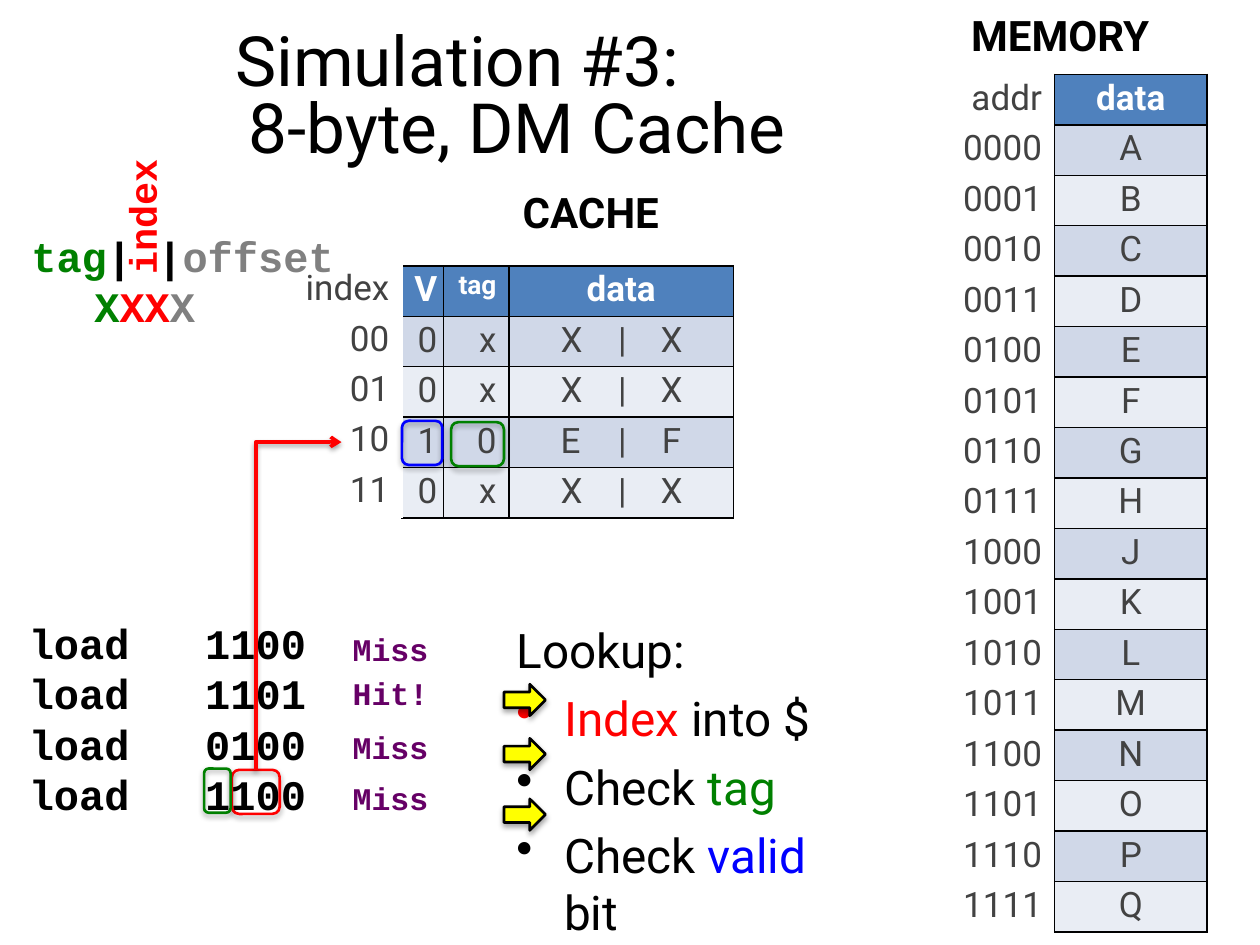
import dataclasses
import pptx
import pptx.chart.data
import pptx.dml.color
import pptx.enum.shapes
import pptx.enum.text
import pptx.oxml
import pptx.oxml.ns
import pptx.util
from lxml import etree

Inches, Pt = pptx.util.Inches, pptx.util.Pt
qn = pptx.oxml.ns.qn
Align = pptx.enum.text.PP_ALIGN
Shape = pptx.enum.shapes.MSO_SHAPE


@dataclasses.dataclass(frozen=True)
class Theme:
    sans: str = "Roboto"
    mono: str = "Courier New"
    black: str = "000000"
    white: str = "FFFFFF"
    grey: str = "808080"
    label: str = "424242"
    red: str = "FF0000"
    green: str = "008000"
    blue: str = "0000FF"
    purple: str = "660066"
    yellow: str = "FFFF00"
    header: str = "4F81BD"
    bands: tuple = ("D0D8E8", "E9EDF4")
    title: float = 39.6
    lookup: float = 27.2
    heading: float = 24
    index: float = 22
    cell: float = 20
    result: float = 18
    small: float = 15


THEME = Theme()
ROW = 0.4


def rgb(value):
    return pptx.dml.color.RGBColor.from_string(value)


def apply(target, values):
    for name, value in values.items():
        setattr(target, name, value)


def child(parent, tag, **attributes):
    return etree.SubElement(parent, qn(tag), {key: str(value) for key, value in attributes.items()})


def write(para, spans, size, font=THEME.sans, bold=False, **layout):
    apply(para, layout)
    for text, color in spans:
        span = para.add_run()
        span.text = text
        apply(span.font, {"name": font, "size": Pt(size), "bold": bold})
        span.font.color.rgb = rgb(color)


def set_tabs(para, stops, align):
    tabs = child(para._p.get_or_add_pPr(), "a:tabLst")
    for stop in stops:
        child(tabs, "a:tab", pos=Inches(stop), algn=align)


def add_text(page, box, lines, size, **style):
    frame = page.shapes.add_textbox(*map(Inches, box)).text_frame
    frame.word_wrap = True
    for number, spans in enumerate(lines):
        para = frame.add_paragraph() if number else frame.paragraphs[0]
        write(para, spans, size, **style)
    return frame


def add_shadow(shape, alpha=35, distance=1.8):
    effects = child(shape._element.spPr, "a:effectLst")
    shadow = child(effects, "a:outerShdw", blurRad=Pt(3.1), dist=Pt(distance), dir=5400000, rotWithShape=0)
    color = child(shadow, "a:srgbClr", val=THEME.black)
    child(color, "a:alpha", val=alpha * 1000)


def add_mark(page, kind, box, line, fill=None):
    mark = page.shapes.add_shape(kind, *map(Inches, box))
    if fill:
        mark.fill.solid()
        mark.fill.fore_color.rgb = rgb(fill)
    else:
        mark.fill.background()
    mark.line.color.rgb = rgb(line)
    mark.line.width = Pt(1.5)
    add_shadow(mark)


def add_grid(page, left, top, widths, rows):
    frame = page.shapes.add_table(rows, len(widths), Inches(left), Inches(top),
                                  Inches(sum(widths)), Inches(ROW * rows))
    table = frame.table
    apply(table, {"first_row": False, "horz_banding": False})
    for column, width in zip(table.columns, widths):
        column.width = Inches(width)
    for row in table.rows:
        row.height = Inches(ROW)
    return table


def border(cell, sides):
    properties = cell._tc.get_or_add_tcPr()
    for number, side in enumerate(sides):
        line = etree.Element(qn(f"a:ln{side}"), {"w": str(Pt(1))})
        child(child(line, "a:solidFill"), "a:srgbClr", val=THEME.black)
        properties.insert(number, line)


def fill_label(cell, text):
    cell.fill.background()
    write(cell.text_frame.paragraphs[0], [(text, THEME.label)], THEME.cell,
          alignment=Align.RIGHT, line_spacing=0.9)


def fill_data(cell, text, row, align, size=THEME.cell):
    header = row == 0
    cell.fill.solid()
    cell.fill.fore_color.rgb = rgb(THEME.header if header else THEME.bands[(row - 1) % 2])
    color = THEME.white if header else THEME.label
    write(cell.text_frame.paragraphs[0], [(text, color)], size, bold=header,
          alignment=align, line_spacing=0.9)
    border(cell, "LRTB")


def add_title(page, box):
    title = page.shapes.title
    apply(title, dict(zip(("left", "top", "width", "height"), map(Inches, box))))
    frame = title.text_frame
    apply(frame, {"word_wrap": True, "auto_size": pptx.enum.text.MSO_AUTO_SIZE.NONE,
                  "vertical_anchor": pptx.enum.text.MSO_ANCHOR.MIDDLE})
    second = frame.add_paragraph()
    for para, text in zip(frame.paragraphs, ("Simulation #3:", "8-byte, DM Cache")):
        write(para, [(text, THEME.black)], THEME.title, alignment=Align.CENTER,
              line_spacing=0.8, space_before=Pt(0))
    second._p.get_or_add_pPr().set("marL", str(Inches(0.95)))


def add_memory(page, left, top):
    add_text(page, (left + 0.1, top - 0.56, 1.7, 0.5), [[("MEMORY", THEME.black)]], THEME.heading, bold=True)
    rows = [("addr", "data")] + [(f"{number:04b}", letter) for number, letter in enumerate("ABCDEFGHJKLMNOPQ")]
    table = add_grid(page, left, top, (0.86, 1.21), len(rows))
    for row, (address, data) in enumerate(rows):
        fill_label(table.cell(row, 0), address)
        border(table.cell(row, 0), "R")
        fill_data(table.cell(row, 1), data, row, Align.CENTER)


def add_cache(page, left, top):
    add_text(page, (left + 0.86, top - 0.68, 1.4, 0.5), [[("CACHE", THEME.black)]], THEME.heading, bold=True)
    empty = ("0", "x", "X\t|\tX")
    rows = [("V", "tag", "data"), empty, empty, ("1", "0", "E\t|\tF"), empty]
    table = add_grid(page, left, top, (0.33, 0.52, 1.78), len(rows))
    for row, (valid, tag, data) in enumerate(rows):
        valid_cell, tag_cell, data_cell = (table.cell(row, column) for column in range(3))
        apply(valid_cell, {"margin_left": Inches(0.05), "margin_right": Inches(0.05)})
        fill_data(valid_cell, valid, row, Align.RIGHT)
        fill_data(tag_cell, tag, row, Align.RIGHT, THEME.cell if row else THEME.small)
        fill_data(data_cell, data, row, Align.LEFT if row else Align.CENTER)
        if row:
            data_cell.margin_left = Inches(0.41)
            set_tabs(data_cell.text_frame.paragraphs[0], (0.49, 0.88), "ctr")
    labels = add_grid(page, left - 1.1, top - 0.01, (1.1,), len(rows))
    for row, text in enumerate(("index", "00", "01", "10", "11")):
        fill_label(labels.cell(row, 0), text)
    add_mark(page, Shape.ROUNDED_RECTANGLE, (left, top + 1.23, 0.32, 0.35), THEME.blue)
    add_mark(page, Shape.ROUNDED_RECTANGLE, (left + 0.39, top + 1.24, 0.42, 0.35), THEME.green)


def add_address_key(page, left, top):
    lines = [[("tag", THEME.green), ("| |", THEME.black), ("offset", THEME.grey)],
             [("X", THEME.green), ("XX", THEME.red), ("X", THEME.grey)]]
    frame = add_text(page, (left, top, 3.51, 1.31), lines, THEME.heading, font=THEME.mono, bold=True)
    frame.paragraphs[1]._p.get_or_add_pPr().set("marL", str(Inches(0.5)))
    add_text(page, (left + 0.41, top - 0.3, 1.13, 0.47), [[("index", THEME.red)]],
             THEME.index, font=THEME.mono, bold=True)
    page.shapes[-1].rotation = 270


def add_loads(page, left, top):
    loads = [("1100", "Miss", 0.1), ("1101", "Hit!", 0.45), ("0100", "Miss", 0.88), ("1100", "Miss", 1.28)]
    frame = add_text(page, (left, top, 2.42, 1.72),
                     [[(f"load\t{address}", THEME.black)] for address, _, _ in loads],
                     THEME.heading, font=THEME.mono, bold=True)
    for para in frame.paragraphs:
        set_tabs(para, (1.4,), "l")
    for _, result, offset in loads:
        add_text(page, (left + 2.57, top + offset, 0.82, 0.4), [[(result, THEME.purple)]],
                 THEME.result, font=THEME.mono, bold=True)
    add_mark(page, Shape.ROUNDED_RECTANGLE, (left + 1.71, top + 1.26, 0.38, 0.35), THEME.red)
    add_mark(page, Shape.ROUNDED_RECTANGLE, (left + 1.49, top + 1.25, 0.21, 0.35), THEME.green)


def add_index_arrow(page, left, top, width, height):
    x, y = left + (width - height) / 2, top + (height - width) / 2
    arrow = page.shapes.add_connector(pptx.enum.shapes.MSO_CONNECTOR.ELBOW, Inches(x), Inches(y),
                                      Inches(x + height), Inches(y + width))
    properties = arrow._element.spPr
    for name, value in {"rot": "5400000", "flipH": "1", "flipV": "1"}.items():
        properties.find(qn("a:xfrm")).set(name, value)
    geometry = properties.find(qn("a:prstGeom"))
    for old in list(geometry):
        geometry.remove(old)
    child(child(geometry, "a:avLst"), "a:gd", name="adj1", fmla="val 100100")
    arrow.line.color.rgb = rgb(THEME.red)
    arrow.line.width = Pt(2)
    child(arrow.line._get_or_add_ln(), "a:tailEnd", type="arrow")
    add_shadow(arrow, 38, 1.6)


def add_lookup(page, left, top):
    lines = [[("Lookup:", THEME.black)],
             [("Index", THEME.red), (" into $", THEME.black)],
             [("Check ", THEME.black), ("tag", THEME.green)],
             [("Check ", THEME.black), ("valid", THEME.blue), (" bit", THEME.black)]]
    frame = add_text(page, (left, top, 3.02, 1.99), lines, THEME.lookup, space_before=Pt(6.3))
    for para in frame.paragraphs[1:]:
        properties = para._p.get_or_add_pPr()
        properties.set("marL", str(Inches(0.38)))
        properties.set("indent", str(-Inches(0.38)))
        child(properties, "a:buChar", char="•")
    for offset in (0.55, 0.98, 1.46):
        add_mark(page, Shape.RIGHT_ARROW, (left, top + offset, 0.33, 0.25), THEME.black, THEME.yellow)


def main():
    deck = pptx.Presentation()
    apply(deck, {"slide_width": Inches(10), "slide_height": Inches(7.5)})
    page = deck.slides.add_slide(deck.slide_layouts[5])
    add_title(page, (0.5, 0.17, 6.26, 1.25))
    add_memory(page, 7.51, 0.59)
    add_cache(page, 3.19, 2.11)
    add_address_key(page, 0.15, 1.78)
    add_loads(page, 0.13, 4.85)
    add_index_arrow(page, 2.03, 3.51, 0.68, 2.6)
    add_lookup(page, 4, 4.88)
    deck.save("out.pptx")


if __name__ == "__main__":
    main()
